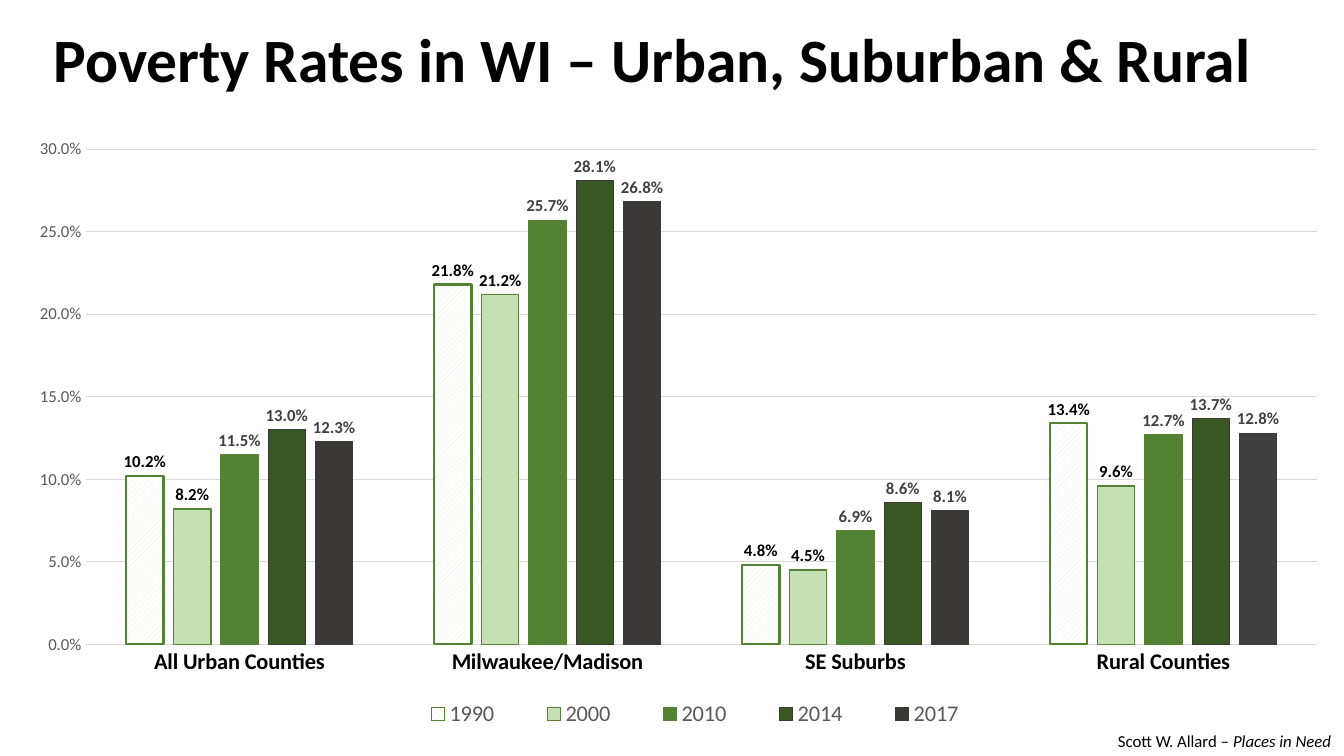
from lxml import etree
from pptx import Presentation
from pptx.chart.data import CategoryChartData
from pptx.dml.color import RGBColor
from pptx.enum.chart import XL_CHART_TYPE, XL_LABEL_POSITION, XL_LEGEND_POSITION, XL_TICK_MARK
from pptx.enum.dml import MSO_PATTERN
from pptx.enum.text import MSO_ANCHOR, PP_ALIGN
from pptx.oxml.ns import qn
from pptx.util import Cm, Pt

CLUSTERED = XL_CHART_TYPE.COLUMN_CLUSTERED
OUTSIDE_END = XL_LABEL_POSITION.OUTSIDE_END
BOTTOM = XL_LEGEND_POSITION.BOTTOM
NO_TICK = XL_TICK_MARK.NONE
HATCH = MSO_PATTERN.WIDE_UPWARD_DIAGONAL
MIDDLE = MSO_ANCHOR.MIDDLE
LEFT, RIGHT = PP_ALIGN.LEFT, PP_ALIGN.RIGHT

FONT = "Calibri"
BLACK, WHITE, GREY, GRID = "000000", "FFFFFF", "595959", "D9D9D9"
GREEN, CHARCOAL, LABEL = "548235", "3B3838", "404040"
PERCENT = "0.0%"
COUNTIES = ["All Urban Counties", "Milwaukee/Madison", "SE Suburbs", "Rural Counties"]
RATES = [
    ("1990", (0.102, 0.218, 0.048, 0.134), "E2F0D9", GREEN, 1.5, BLACK),
    ("2000", (0.082, 0.212, 0.045, 0.096), "C5E0B4", GREEN, 1, BLACK),
    ("2010", (0.115, 0.257, 0.069, 0.127), GREEN, GREEN, 0.75, LABEL),
    ("2014", (0.13, 0.281, 0.086, 0.137), "385723", CHARCOAL, 0.75, LABEL),
    ("2017", (0.123, 0.268, 0.081, 0.128), CHARCOAL, CHARCOAL, 0.75, LABEL),
]


def rgb(color):
    """Turn a hex string into a colour."""
    return RGBColor.from_string(color)


def set_font(font, size, color, bold=False, italic=False):
    """Format a font."""
    font.name, font.size = FONT, Pt(size)
    font.bold, font.italic = bold, italic
    font.color.rgb = rgb(color)


def set_fill(fill, color):
    """Fill with one solid colour."""
    fill.solid()
    fill.fore_color.rgb = rgb(color)


def set_line(line, color, width):
    """Set the colour and width of a line."""
    line.color.rgb = rgb(color)
    line.width = Pt(width)


def set_layout(parent, anchor, x, y, w, h, inner=False):
    """Place a chart part by fractions of the chart area."""
    for old in parent.findall(qn("c:layout")):
        parent.remove(old)
    layout = etree.Element(qn("c:layout"))
    manual = etree.SubElement(layout, qn("c:manualLayout"))
    settings = [("layoutTarget", "inner")] if inner else []
    settings += [("xMode", "edge"), ("yMode", "edge")]
    settings += [("x", x), ("y", y), ("w", w), ("h", h)]
    for tag, value in settings:
        etree.SubElement(manual, qn(f"c:{tag}")).set("val", str(value))
    if anchor is None:
        parent.insert(0, layout)
    else:
        anchor.addnext(layout)


def add_title(s, text):
    """Write the slide title in its placeholder."""
    sp = s.shapes.title
    sp.left, sp.top, sp.width, sp.height = Cm(1.09), Cm(0.4), Cm(31.62), Cm(2.13)
    set_fill(sp.fill, WHITE)
    tf = sp.text_frame
    tf.text = text
    tf.vertical_anchor = MIDDLE
    p = tf.paragraphs[0]
    p.alignment = LEFT
    p.line_spacing = 1.0
    set_font(p.runs[0].font, 44, BLACK, bold=True)


def format_series(series, color, outline, width, label_color):
    """Colour one year's columns and label them."""
    fill = series.format.fill
    if series.name == "1990":
        fill.patterned()
        fill.pattern = HATCH
        fill.fore_color.rgb = rgb(color)
        fill.back_color.rgb = rgb(WHITE)
    else:
        set_fill(fill, color)
    set_line(series.format.line, outline, width)
    series.invert_if_negative = False
    labels = series.data_labels
    labels.show_value = True
    labels.number_format = PERCENT
    labels.number_format_is_linked = False
    labels.position = OUTSIDE_END
    set_font(labels.font, 12, label_color, bold=True)


def format_axes(chart):
    """Style the county axis and the rate axis."""
    counties, rates = chart.category_axis, chart.value_axis
    counties.major_tick_mark = rates.major_tick_mark = NO_TICK
    set_font(counties.tick_labels.font, 16, BLACK, bold=True)
    set_line(counties.format.line, GRID, 0.75)
    set_font(rates.tick_labels.font, 12, GREY)
    rates.tick_labels.number_format = PERCENT
    rates.tick_labels.number_format_is_linked = False
    rates.minimum_scale, rates.maximum_scale, rates.major_unit = 0, 0.3, 0.05
    rates.format.line.fill.background()
    set_line(rates.major_gridlines.format.line, GRID, 0.75)


def add_rate_chart(s):
    """Add the clustered columns of poverty rates."""
    data = CategoryChartData(number_format=PERCENT)
    data.categories = COUNTIES
    for year, values, *_ in RATES:
        data.add_series(year, values)
    frame = s.shapes.add_chart(CLUSTERED, Cm(0.43), Cm(3.22), Cm(33.17), Cm(15.39), data)
    chart = frame.chart
    chart.has_title = False
    set_font(chart.font, 10, BLACK)
    plot = chart.plots[0]
    plot.gap_width, plot.overlap = 219, -27
    plot.vary_by_categories = False
    for series, (_, _, *style) in zip(plot.series, RATES):
        format_series(series, *style)
    rural = plot.series[-1].points[3].format
    set_fill(rural.fill, LABEL)
    set_line(rural.line, CHARCOAL, 0.75)
    format_axes(chart)
    chart.has_legend = True
    legend = chart.legend
    legend.position = BOTTOM
    legend.include_in_layout = False
    set_font(legend.font, 16, GREY)
    plot_area = chart.element.find(".//" + qn("c:plotArea"))
    set_layout(plot_area, None, 0.052, 0.035, 0.936, 0.811, inner=True)
    legend_xml = chart.element.find(".//" + qn("c:legend"))
    set_layout(legend_xml, legend_xml.find(qn("c:legendPos")), 0.28, 0.92, 0.47, 0.08)


def add_credit(s, author, book):
    """Add the credit line with the book title in italics."""
    tf = s.shapes.add_textbox(Cm(27.86), Cm(18.29), Cm(5.94), Cm(0.76)).text_frame
    tf.word_wrap = False
    p = tf.paragraphs[0]
    p.alignment = RIGHT
    for text, italic in ((author, False), (book, True)):
        r = p.add_run()
        r.text = text
        set_font(r.font, 12, BLACK, italic=italic)


def main():
    """Build and save the slide."""
    prs = Presentation()
    prs.slide_width, prs.slide_height = Cm(33.87), Cm(19.05)
    s = prs.slides.add_slide(prs.slide_layouts[5])
    add_rate_chart(s)
    add_title(s, "Poverty Rates in WI – Urban, Suburban & Rural")
    add_credit(s, "Scott W. Allard – ", "Places in Need")
    prs.save("out.pptx")


if __name__ == "__main__":
    main()
